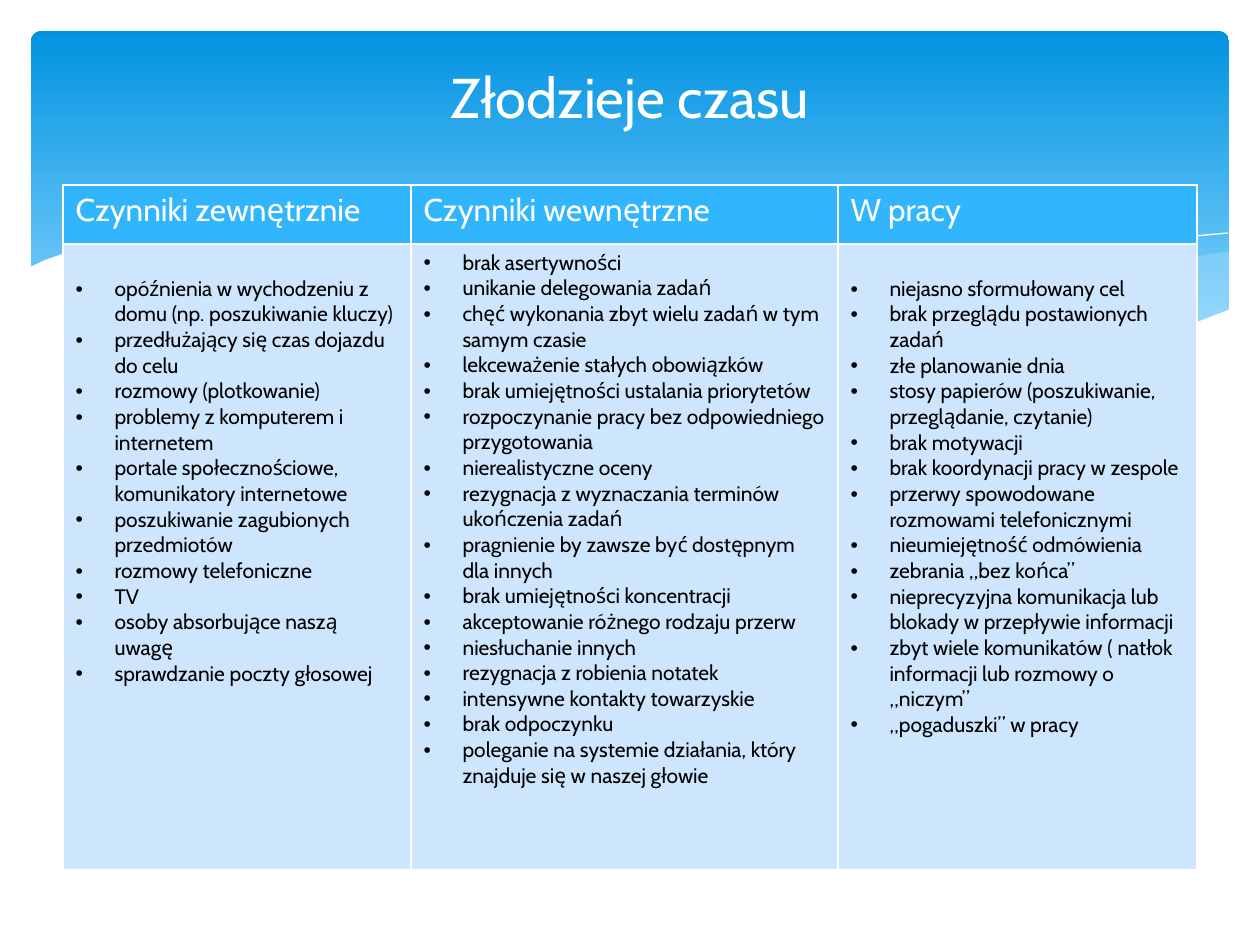
from lxml import etree
from pptx import Presentation
from pptx.dml.color import RGBColor
from pptx.enum.shapes import MSO_SHAPE
from pptx.enum.text import MSO_ANCHOR, PP_ALIGN
from pptx.oxml.ns import qn
from pptx.util import Pt

ROUND_RECT = MSO_SHAPE.ROUNDED_RECTANGLE
MIDDLE = MSO_ANCHOR.MIDDLE
CENTER = PP_ALIGN.CENTER

SCALE = 914400 / 126
FONT = "Cabin"
WHITE, BLACK = "FFFFFF", "000000"
PALE_WAVE, HEADER_FILL, BODY_FILL = "C6E7FC", "31B6FD", "CEE5FE"
BAND_STOPS = [(0, "0293E0"), (0.9, "83D3FE")]

# Wave points are in px from the top left of the band.
RIGHT_WAVE = [
    (1198, 220), (1163, 226), (1110, 237), (1053, 249), (983, 267), (917, 281),
    (858, 292), (801, 302), (839, 307), (891, 314), (937, 318), (994, 319),
    (1045, 316), (1089, 311), (1129, 302), (1164, 292), (1198, 280)]
MIDDLE_WAVE = [
    (1094, 312), (1023, 302), (945, 289), (858, 271), (761, 248), (704, 234),
    (650, 224), (585, 215), (525, 207), (471, 203), (423, 202), (382, 204),
    (329, 209), (375, 215), (425, 224), (478, 234), (534, 248), (636, 271),
    (726, 290), (806, 304), (878, 314), (942, 318), (999, 319), (1048, 318)]
FALLING_LINE = [
    (358, 214), (391, 209), (440, 205), (493, 204), (559, 207), (640, 213),
    (735, 226), (844, 244), (970, 272), (1111, 311)]
RISING_LINE = [
    (741, 292), (844, 265), (946, 241), (1060, 219), (1133, 208), (1197, 202)]
WHITE_WAVE = [
    (1200, 278), (1166, 291), (1128, 302), (1086, 310), (1040, 315), (988, 318),
    (927, 315), (861, 309), (785, 299), (698, 284), (602, 262), (532, 246),
    (461, 229), (397, 217), (336, 208), (284, 203), (212, 200), (152, 202),
    (102, 207), (64, 214), (34, 222), (14, 229), (-3, 237), (-3, 383), (1200, 383)]

# Each column: heading, width, top margin of the list, items.
COLUMNS = [
    ("Czynniki zewnętrznie", 348, 32, [
        "opóźnienia w wychodzeniu z domu (np. poszukiwanie kluczy)",
        "przedłużający się czas dojazdu do celu",
        "rozmowy (plotkowanie)",
        "problemy z komputerem i internetem",
        "portale społecznościowe, komunikatory internetowe",
        "poszukiwanie zagubionych przedmiotów",
        "rozmowy telefoniczne",
        "TV",
        "osoby absorbujące naszą uwagę",
        "sprawdzanie poczty głosowej"]),
    ("Czynniki wewnętrzne", 427, 6, [
        "brak asertywności",
        "unikanie delegowania zadań",
        "chęć wykonania zbyt wielu zadań w tym samym czasie",
        "lekceważenie stałych obowiązków",
        "brak umiejętności ustalania priorytetów",
        "rozpoczynanie pracy bez odpowiedniego przygotowania",
        "nierealistyczne oceny",
        "rezygnacja z wyznaczania terminów ukończenia zadań",
        "pragnienie by zawsze być dostępnym dla innych",
        "brak umiejętności koncentracji",
        "akceptowanie różnego rodzaju przerw",
        "niesłuchanie innych",
        "rezygnacja z robienia notatek",
        "intensywne kontakty towarzyskie",
        "brak odpoczynku",
        "poleganie na systemie działania, który znajduje się w naszej głowie"]),
    ("W pracy", 359, 32, [
        "niejasno sformułowany cel",
        "brak przeglądu postawionych zadań",
        "złe planowanie dnia",
        "stosy papierów (poszukiwanie, przeglądanie, czytanie)",
        "brak motywacji",
        "brak koordynacji pracy w zespole",
        "przerwy spowodowane rozmowami telefonicznymi",
        "nieumiejętność odmówienia",
        "zebrania „bez końca”",
        "nieprecyzyjna komunikacja lub blokady w przepływie informacji",
        "zbyt wiele komunikatów ( natłok informacji lub rozmowy o „niczym”",
        "„pogaduszki” w pracy"]),
]


def px(n):
    return round(n * SCALE)


def rgb(value):
    return RGBColor.from_string(value)


def write(p, text, size, color):
    r = p.add_run()
    r.text = text
    for name, value in {"name": FONT, "size": Pt(size)}.items():
        setattr(r.font, name, value)
    r.font.color.rgb = rgb(color)


def add_bullet(p):
    pPr = p._p.get_or_add_pPr()
    pPr.set("marL", str(px(39)))
    pPr.set("indent", str(px(-39)))
    etree.SubElement(pPr, qn("a:buFont"), typeface="Arial")
    etree.SubElement(pPr, qn("a:buChar"), char="•")


def add_wave(slide, x, y, points, fill=None, alpha=100):
    """Draw a filled wave, or an open white hairline when no fill is given."""
    builder = slide.shapes.build_freeform(*points[0], scale=SCALE)
    builder.add_line_segments(points[1:], close=fill is not None)
    sp = builder.convert_to_shape(px(x), px(y))
    sp.shadow.inherit = False
    if fill is None:
        sp.fill.background()
        sp.line.color.rgb = rgb(WHITE)
        sp.line.width = Pt(0)
        return
    sp.line.fill.background()
    sp.fill.solid()
    sp.fill.fore_color.rgb = rgb(fill)
    if alpha < 100:
        clr = sp._element.spPr.find(qn("a:solidFill"))[0]
        etree.SubElement(clr, qn("a:alpha"), val=str(alpha * 1000))


def add_band(slide, x, y, w, h):
    sp = slide.shapes.add_shape(ROUND_RECT, px(x), px(y), px(w), px(h))
    sp.adjustments[0] = 0.03
    sp.shadow.inherit = False
    sp.line.fill.background()
    sp.fill.gradient()
    sp.fill.gradient_angle = 270
    for stop, (position, color) in zip(sp.fill.gradient_stops, BAND_STOPS):
        stop.position = position
        stop.color.rgb = rgb(color)
    add_wave(slide, x, y, RIGHT_WAVE, PALE_WAVE, 29)
    add_wave(slide, x, y, MIDDLE_WAVE, PALE_WAVE, 40)
    add_wave(slide, x, y, FALLING_LINE)
    add_wave(slide, x, y, RISING_LINE)
    add_wave(slide, x, y, WHITE_WAVE, WHITE)


def add_title(slide, x, y, w, h, text):
    tf = slide.shapes.add_textbox(px(x), px(y), px(w), px(h)).text_frame
    tf.word_wrap = True
    tf.vertical_anchor = MIDDLE
    p = tf.paragraphs[0]
    p.alignment = CENTER
    write(p, text, 32, WHITE)


def style_cell(cell, fill):
    tcPr = cell._tc.get_or_add_tcPr()
    for side in ("lnL", "lnR", "lnT", "lnB"):
        ln = etree.SubElement(tcPr, qn(f"a:{side}"), w=str(Pt(1)))
        solid = etree.SubElement(ln, qn("a:solidFill"))
        etree.SubElement(solid, qn("a:srgbClr"), val=WHITE)
    cell.fill.solid()
    cell.fill.fore_color.rgb = rgb(fill)


def add_thieves_table(slide, x, y, w, h, header_h):
    table = slide.shapes.add_table(
        2, len(COLUMNS), px(x), px(y), px(w), px(h)).table
    table.horz_banding = False
    table.rows[0].height = px(header_h)
    table.rows[1].height = px(h - header_h)
    for i, (heading, width, top, items) in enumerate(COLUMNS):
        table.columns[i].width = px(width)
        head, body = table.cell(0, i), table.cell(1, i)
        style_cell(head, HEADER_FILL)
        write(head.text_frame.paragraphs[0], heading, 18, WHITE)
        style_cell(body, BODY_FILL)
        body.margin_top = px(top)
        tf = body.text_frame
        for n, item in enumerate(items):
            p = tf.add_paragraph() if n else tf.paragraphs[0]
            add_bullet(p)
            write(p, item, 12, BLACK)


def main():
    prs = Presentation()
    prs.slide_width, prs.slide_height = px(1260), px(945)
    slide = prs.slides.add_slide(prs.slide_layouts[6])
    add_band(slide, 31, 31, 1198, 340)
    add_thieves_table(slide, 63, 185, 1134, 685, 59)
    add_title(slide, 63, 38, 1134, 117, "Złodzieje czasu")
    prs.save("out.pptx")


if __name__ == "__main__":
    main()
